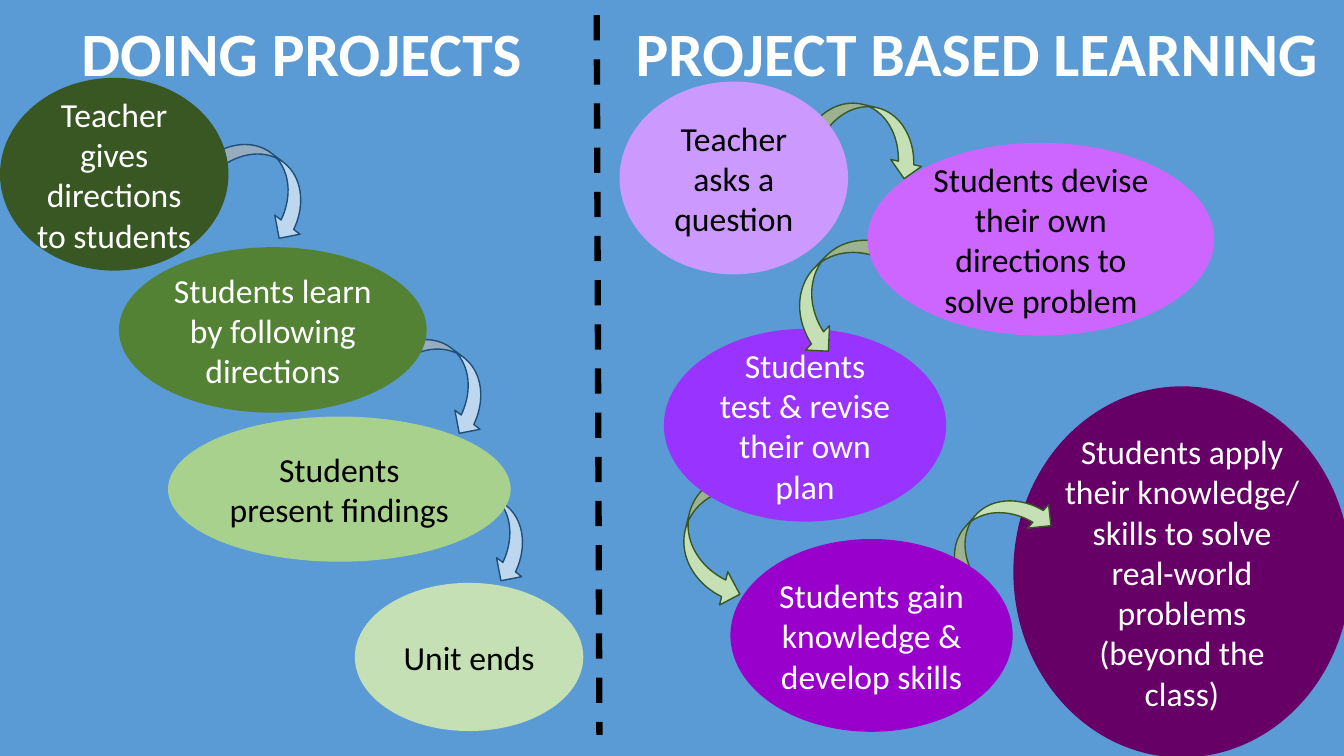
from pptx import Presentation, util as u
from pptx.dml.color import RGBColor
from pptx.enum import dml, shapes, text
from pptx.oxml import ns
from lxml import etree

BLACK = RGBColor(0x00, 0x00, 0x00)
WHITE = RGBColor(0xFF, 0xFF, 0xFF)
SKY = RGBColor(0x5B, 0x9B, 0xD5)
PALE_BLUE = RGBColor(0xBD, 0xD7, 0xEE)
NAVY = RGBColor(0x1F, 0x4E, 0x79)
FOREST = RGBColor(0x38, 0x57, 0x23)
GREEN = RGBColor(0x54, 0x82, 0x35)
LEAF = RGBColor(0xA9, 0xD1, 0x8E)
PALE_GREEN = RGBColor(0xC5, 0xE0, 0xB4)
LILAC = RGBColor(0xCC, 0x99, 0xFF)
ORCHID = RGBColor(0xCC, 0x66, 0xFF)
VIOLET = RGBColor(0x99, 0x33, 0xFF)
PURPLE = RGBColor(0x99, 0x00, 0xCC)
PLUM = RGBColor(0x66, 0x00, 0x66)

FONT = "Calibri"
WIDTH, HEIGHT = u.Inches(13.333), u.Inches(7.5)
COLUMN, ROW = WIDTH / 100, HEIGHT / 100
STEP_ROWS = 25.5
SMALL_ARROW = (4.7, 16.4)
LARGE_ARROW = (5.1, 18.8)


def grid(left, top, width, height):
    """Turn columns and rows into a box in EMU."""
    return (round(left * COLUMN), round(top * ROW),
            round(width * COLUMN), round(height * ROW))


def write(frame, wording, size, color, align, bold=False):
    frame.text = wording
    for paragraph in frame.paragraphs:
        paragraph.alignment = align
        for run in paragraph.runs:
            run.font.name = FONT
            run.font.size = u.Pt(size)
            run.font.bold = bold
            run.font.color.rgb = color


def format_heading(heading, box, wording):
    heading.left, heading.top, heading.width, heading.height = grid(*box)
    frame = heading.text_frame
    frame.word_wrap = False
    frame.auto_size = text.MSO_AUTO_SIZE.SHAPE_TO_FIT_TEXT
    frame.vertical_anchor = text.MSO_ANCHOR.TOP
    write(frame, wording, 44, WHITE, text.PP_ALIGN.LEFT, bold=True)


def add_step(slide, box, wording, fill, ink):
    step = slide.shapes.add_shape(shapes.MSO_SHAPE.OVAL, *grid(*box))
    step.shadow.inherit = False
    step.fill.solid()
    step.fill.fore_color.rgb = fill
    step.line.fill.background()
    frame = step.text_frame
    frame.word_wrap = True
    frame.vertical_anchor = text.MSO_ANCHOR.MIDDLE
    frame.margin_left = frame.margin_right = u.Inches(0.01)
    frame.margin_top = frame.margin_bottom = u.Inches(0.01)
    write(frame, wording, 24, ink, text.PP_ALIGN.CENTER)


def add_arrow(slide, box, angle, fill, outline, mirrored=False):
    arrow = slide.shapes.add_shape(shapes.MSO_SHAPE.CURVED_LEFT_ARROW, *grid(*box))
    arrow.shadow.inherit = False
    arrow.rotation = angle
    arrow.fill.solid()
    arrow.fill.fore_color.rgb = fill
    arrow.line.color.rgb = outline
    arrow.line.width = u.Pt(1)
    if mirrored:
        arrow.element.spPr.xfrm.set("flipH", "1")


def add_doing_projects(slide, left):
    format_heading(slide.shapes.title, (left + 5.3, 1.3, 34.6, 11.2), "DOING PROJECTS")
    for x, y in ((17.1, 16.3), (30.5, 42.1), (33.6, 61.6)):
        add_arrow(slide, (left + x, y, *SMALL_ARROW), 307.1, PALE_BLUE, NAVY)
    for x, y, width, height, wording, fill, ink in (
        (0, 10.3, 17, STEP_ROWS, "Teacher gives directions to students", FOREST, WHITE),
        (8.85, 32.7, 22.9, 21.9, "Students learn by following\ndirections", GREEN, WHITE),
        (12.5, 55.1, 25.5, 19.2, "Students\npresent findings", LEAF, BLACK),
        (26.4, 77.1, 17, 19.6, "Unit ends", PALE_GREEN, BLACK),
    ):
        add_step(slide, (left + x, y, width, height), wording, fill, ink)


def add_project_based_learning(slide, left):
    heading = slide.shapes.add_textbox(0, 0, 0, 0)
    format_heading(heading, (left + 0.45, 1.3, 52.8, 11.2), "PROJECT BASED LEARNING")

    def steps(*rows):
        for x, y, width, height, wording, fill, ink in rows:
            add_step(slide, (left + x, y, width, height), wording, fill, ink)

    def arrows(*rows):
        for x, y, size, angle, mirrored in rows:
            add_arrow(slide, (left + x, y, *size), angle, PALE_GREEN, FOREST, mirrored)

    arrows((4.9, 61.2, LARGE_ARROW, 14, True))
    steps(
        (3.3, 43.5, 21, STEP_ROWS, "Students\ntest & revise their own plan", VIOLET, WHITE),
        (29.3, 51.1, 25.1, 49.1, "Students apply their knowledge/ skills to solve "
         "real-world problems (beyond the class)", PLUM, WHITE),
    )
    arrows(
        (16, 10, SMALL_ARROW, 282.9, False),
        (14, 28.8, LARGE_ARROW, 44.7, True),
        (25.7, 63.1, SMALL_ARROW, 221.8, False),
    )
    steps(
        (0, 10.8, 17, STEP_ROWS, "Teacher asks a question", LILAC, BLACK),
        (18.45, 18.9, 25.8, STEP_ROWS,
         "Students devise their own directions to solve problem", ORCHID, BLACK),
        (8.25, 71.3, 21, STEP_ROWS, "Students gain knowledge & develop skills", PURPLE, WHITE),
    )


def add_divider(slide, start, end):
    ends = [round(n * unit) for n, unit in zip(start + end, (COLUMN, ROW) * 2)]
    divider = slide.shapes.add_connector(shapes.MSO_CONNECTOR.STRAIGHT, *ends)
    divider.line.color.rgb = BLACK
    divider.line.width = u.Pt(4.5)
    divider.line.dash_style = dml.MSO_LINE.DASH
    etree.SubElement(divider.element.spPr, ns.qn("a:effectLst"))


def main():
    deck = Presentation()
    deck.slide_width, deck.slide_height = WIDTH, HEIGHT
    slide = deck.slides.add_slide(deck.slide_layouts[5])
    slide.background.fill.solid()
    slide.background.fill.fore_color.rgb = SKY
    add_divider(slide, (44.4, 2), (44.6, 97.2))
    add_doing_projects(slide, 0)
    add_project_based_learning(slide, 46.1)
    deck.save("out.pptx")


if __name__ == "__main__":
    main()
